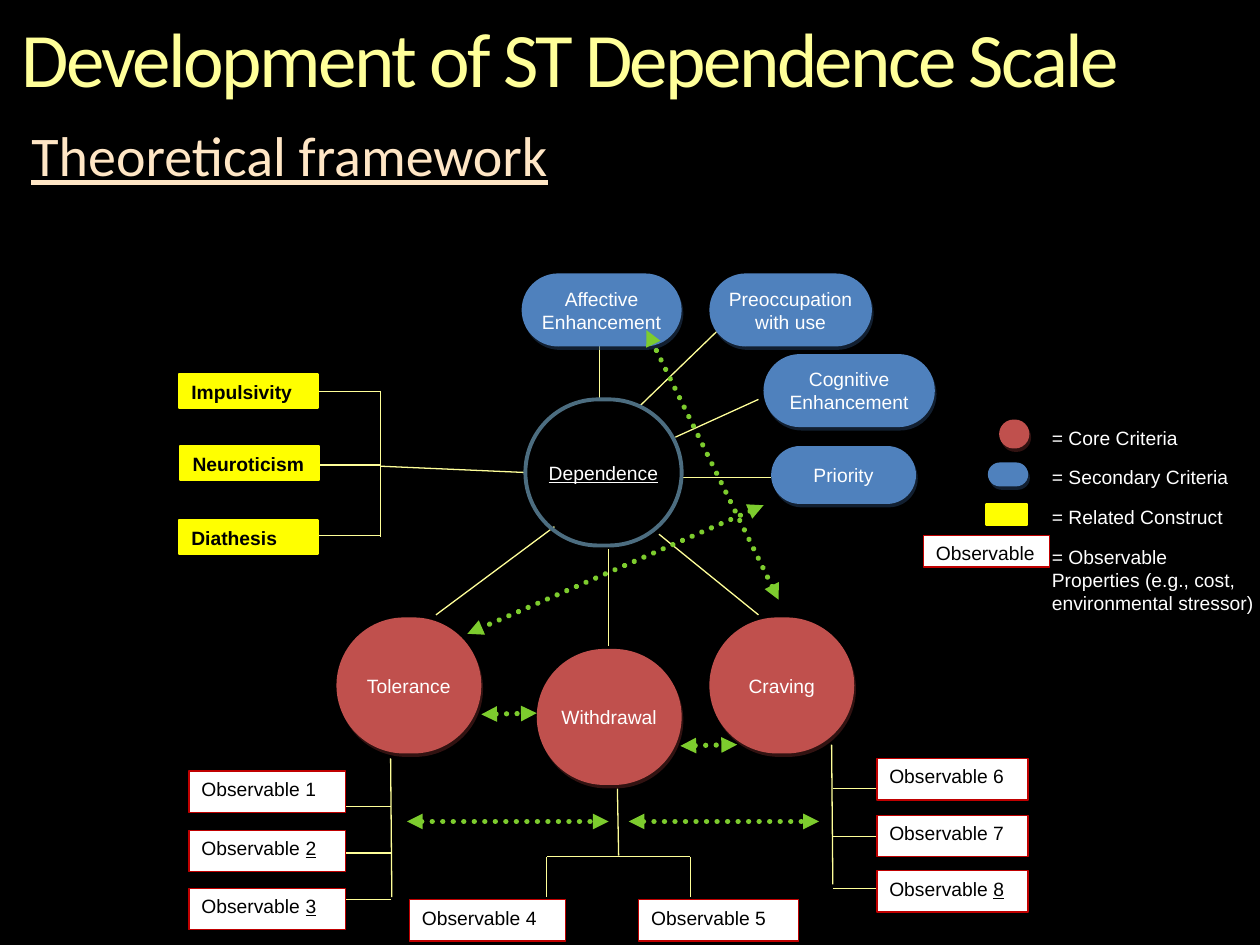
"""Build the slide on the theoretical framework of the ST dependence scale."""
from lxml.etree import SubElement
from pptx import Presentation
from pptx.dml.color import RGBColor
from pptx.enum.dml import MSO_LINE
from pptx.enum.shapes import MSO_CONNECTOR, MSO_SHAPE
from pptx.enum.text import MSO_ANCHOR, PP_ALIGN
from pptx.oxml.ns import qn
from pptx.util import Inches, Pt

COLORS = {
    "background": "000000", "title": "FFFF99", "subtitle": "FFE6C5",
    "light": "FFFFFF", "dark": "000000", "ring": "4C6D80",
    "core": "C0504D", "core_shadow": "622423",
    "secondary": "4F81BD", "secondary_shadow": "243F60",
    "related": "FFFF00", "observable": "FFFFFF", "observable_edge": "C00000",
    "link": "FFFF99", "association": "7DCC2E",
}
RGB = {name: RGBColor.from_string(value) for name, value in COLORS.items()}
EDGES = {"related": ("related", 1.25), "observable": ("observable_edge", 0.75),
         "ring": ("ring", 2.25)}

prs = Presentation()
prs.slide_width, prs.slide_height = Inches(10), Inches(7.5)
slide = prs.slides.add_slide(prs.slide_layouts[6])
slide.background.fill.solid()
slide.background.fill.fore_color.rgb = RGB["background"]


def add_node(kind, left, top, width, height, label="", underlined=""):
    squared = kind in ("related", "observable")
    preset = MSO_SHAPE.RECTANGLE if squared else MSO_SHAPE.ROUNDED_RECTANGLE
    node = slide.shapes.add_shape(
        preset, Inches(left), Inches(top), Inches(width), Inches(height))
    node.shadow.inherit = False
    if kind == "ring":
        node.fill.background()
    else:
        node.fill.solid()
        node.fill.fore_color.rgb = RGB[kind]
    if kind in EDGES:
        edge, weight = EDGES[kind]
        node.line.color.rgb = RGB[edge]
        node.line.width = Pt(weight)
    else:
        node.line.fill.background()
        effects = node._element.spPr.find(qn("a:effectLst"))
        shadow = SubElement(effects, qn("a:outerShdw"), blurRad="0", dist=str(Pt(2.2)),
                            dir=str(63 * 60000), algn="ctr", rotWithShape="0")
        tint = SubElement(shadow, qn("a:srgbClr"), val=COLORS[kind + "_shadow"])
        SubElement(tint, qn("a:alpha"), val="50000")
    frame = node.text_frame
    frame.word_wrap = True
    frame.vertical_anchor = MSO_ANCHOR.TOP if squared else MSO_ANCHOR.MIDDLE
    if not squared:
        node.adjustments[0] = 0.5
        frame.margin_left = frame.margin_right = frame.margin_top = frame.margin_bottom = 0
    if not label + underlined:
        return
    paragraph = frame.paragraphs[0]
    paragraph.alignment = PP_ALIGN.LEFT if squared else PP_ALIGN.CENTER
    paragraph.font.name, paragraph.font.size = "Arial", Pt(11)
    paragraph.font.bold = kind == "related"
    paragraph.font.color.rgb = RGB["dark" if squared else "light"]
    if label:
        paragraph.add_run().text = label
    if underlined:
        run = paragraph.add_run()
        run.text = underlined
        run.font.underline = True


def add_link(x1, y1, x2, y2, color="link", weight=0.75, dotted=False):
    link = slide.shapes.add_connector(
        MSO_CONNECTOR.STRAIGHT, Inches(x1), Inches(y1), Inches(x2), Inches(y2))
    link.line.color.rgb = RGB[color]
    link.line.width = Pt(weight)
    if dotted:
        link.line.dash_style = MSO_LINE.ROUND_DOT
        stroke = link._element.spPr.find(qn("a:ln"))
        stroke.set("cap", "rnd")
        for end in ("a:headEnd", "a:tailEnd"):
            SubElement(stroke, qn(end), type="triangle")
    SubElement(link._element.spPr, qn("a:effectLst"))


headings = [
    ("Development of ST Dependence Scale", 0.17, 0.17, 44, "title"),
    ("Theoretical framework", 0.25, 1.02, 32, "subtitle"),
]
for wording, left, top, size, color in headings:
    heading = slide.shapes.add_textbox(
        Inches(left), Inches(top), Inches(9.17), Inches(0.67)).text_frame
    heading.word_wrap = True
    heading.margin_left = heading.margin_right = heading.margin_top = heading.margin_bottom = 0
    line = heading.paragraphs[0]
    line.line_spacing = 0.9
    run = line.add_run()
    run.text = wording
    line.font.name, line.font.size = "Calibri", Pt(size)
    line.font.color.rgb = RGB[color]
    if color == "title":
        run.font._element.set("spc", "-150")
    else:
        line.font.underline = True

criteria_links = [
    (4.83, 4.36, 4.83, 5.13), (5.23, 4.24, 6.02, 4.88), (5.42, 3.79, 6.12, 3.79),
    (5.07, 3.23, 5.7, 2.62), (4.4, 4.18, 3.46, 4.88), (5.36, 3.47, 6.02, 3.17),
    (4.76, 3.16, 4.76, 2.47),
]
construct_links = [(3.02, 3.7, 4.17, 3.75), (3.02, 3.1, 3.02, 4.26)]
construct_links += [(2.51, y, 3.02, y) for y in (3.11, 3.69, 4.25)]
observable_links = [(3.1, 6.02, 3.11, 7.12), (6.6, 5.91, 6.61, 7.02),
                    (4.9, 6.26, 4.91, 6.79), (4.34, 6.8, 5.48, 6.8)]
observable_links += [(2.74, y, 3.1, y) for y in (6.4, 6.77, 7.14)]
observable_links += [(6.61, y, 6.96, y) for y in (6.26, 6.64, 7.05)]
observable_links += [(x, 6.8, x, 7.12) for x in (4.34, 5.48)]
for ends in criteria_links + construct_links + observable_links:
    add_link(*ends)

add_node("ring", 4.17, 3.17, 1.24, 1.16, underlined="Dependence")
for criterion, left, top in [("Tolerance", 2.67, 4.9), ("Withdrawal", 4.26, 5.15),
                             ("Craving", 5.63, 4.9)]:
    add_node("core", left, top, 1.15, 1.08, criterion)
for criterion, left, top, width, height in [
    ("Priority", 6.12, 3.54, 1.15, 0.46),
    ("Cognitive Enhancement", 6.06, 2.81, 1.36, 0.58),
    ("Preoccupation with use", 5.63, 2.17, 1.29, 0.58),
    ("Affective Enhancement", 4.14, 2.17, 1.27, 0.58),
]:
    add_node("secondary", left, top, width, height, criterion)
for construct, left, top in [("Impulsivity", 1.42, 2.97), ("Neuroticism", 1.43, 3.54),
                             ("Diathesis", 1.42, 4.13)]:
    add_node("related", left, top, 1.1, 0.27, construct)
for label, underlined, left, top, width in [
    ("Observable 1", "", 1.5, 6.12, 1.24),
    ("Observable ", "2", 1.5, 6.59, 1.24),
    ("Observable ", "3", 1.5, 7.05, 1.24),
    ("Observable 4", "", 3.25, 7.14, 1.24),
    ("Observable 5", "", 5.07, 7.14, 1.27),
    ("Observable 6", "", 6.96, 6.02, 1.2),
    ("Observable 7", "", 6.96, 6.47, 1.2),
    ("Observable ", "8", 6.96, 6.91, 1.2),
]:
    add_node("observable", left, top, width, 0.33, label, underlined)

for ends in [
    (3.82, 5.67, 4.26, 5.66), (5.4, 5.92, 5.85, 5.91),
    (3.23, 6.52, 4.83, 6.52), (4.99, 6.52, 6.5, 6.52),
    (6.18, 4.76, 5.13, 2.62), (6.06, 4.01, 3.71, 5.03),
]:
    add_link(*ends, color="association", weight=3, dotted=True)

add_node("core", 7.93, 3.33, 0.24, 0.23)
add_node("secondary", 7.84, 3.67, 0.32, 0.19)
add_node("related", 7.83, 4, 0.32, 0.17)
legend = slide.shapes.add_textbox(
    Inches(8.25), Inches(3.33), Inches(1.83), Inches(2.12)).text_frame
legend.word_wrap = True
meanings = ["= Core Criteria", "= Secondary Criteria", "= Related Construct",
            "= Observable Properties (e.g., cost, environmental stressor)"]
for index, meaning in enumerate(meanings):
    entry = legend.add_paragraph() if index else legend.paragraphs[0]
    entry.text = meaning
    entry.font.name, entry.font.size = "Arial", Pt(11)
    entry.font.color.rgb = RGB["light"]
    if index:
        entry.space_before = Pt(9.5)
add_node("observable", 7.33, 4.25, 1, 0.25, "Observable")

prs.save("out.pptx")
